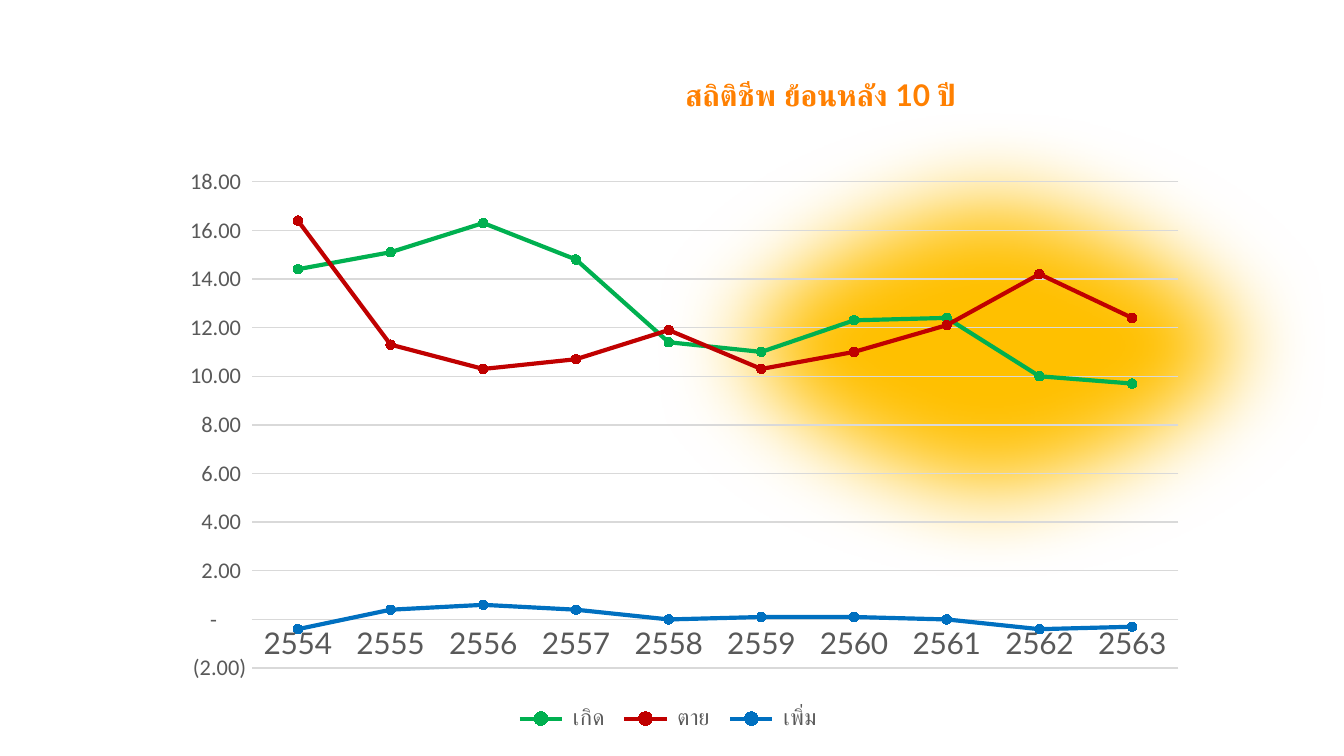
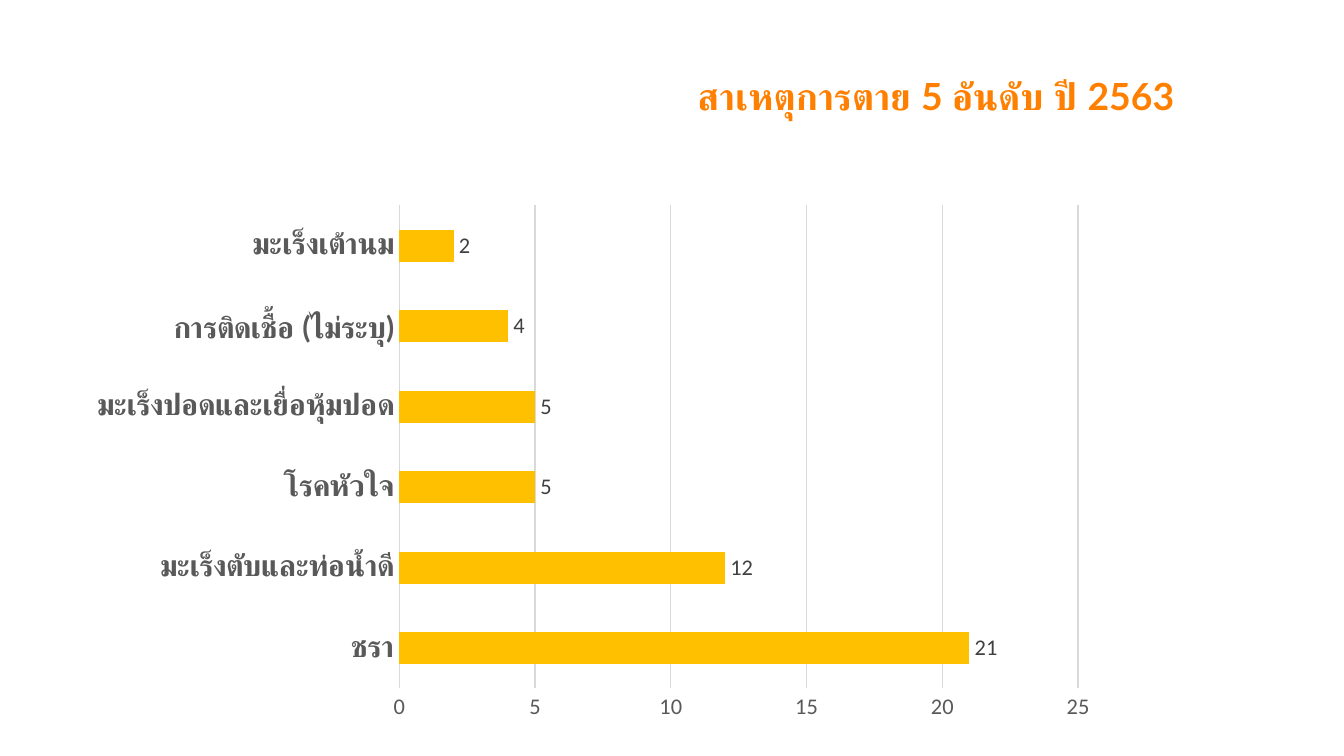
from dataclasses import dataclass

from pptx import Presentation
from pptx.chart.axis import CategoryAxis, ValueAxis
from pptx.chart.chart import Chart
from pptx.chart.data import CategoryChartData
from pptx.dml.color import RGBColor
from pptx.enum.chart import XL_CHART_TYPE as ChartType
from pptx.enum.chart import XL_LABEL_POSITION as LabelPosition
from pptx.enum.chart import XL_LEGEND_POSITION as LegendPosition
from pptx.enum.chart import XL_MARKER_STYLE as MarkerStyle
from pptx.enum.chart import XL_TICK_MARK as TickMark
from pptx.enum.shapes import MSO_SHAPE as Preset
from pptx.enum.text import MSO_ANCHOR as Anchor
from pptx.enum.text import MSO_AUTO_SIZE as AutoSize
from pptx.enum.text import PP_ALIGN as Align
from pptx.oxml import parse_xml
from pptx.oxml.ns import nsdecls, qn
from pptx.slide import Slide
from pptx.text.text import Font
from pptx.util import Emu, Inches, Pt

SLIDE_WIDTH = Inches(10)
SLIDE_HEIGHT = Emu(SLIDE_WIDTH * 9 // 16)
TITLE_ONLY = 5


@dataclass(frozen=True)
class Theme:
    background: str = "FFFFFF"
    title: str = "FF8001"
    highlight: str = "FFC000"
    chart_text: str = "000000"
    axis_text: str = "595959"
    label_text: str = "404040"
    grid: str = "D9D9D9"
    births: str = "00B050"
    deaths: str = "C00000"
    increase: str = "0070C0"
    heading_font: str = "Lato"
    body_font: str = "Calibri"
    base_size: float = 10
    value_size: float = 12
    category_size: float = 16
    grid_width: float = 0.75
    trend_width: float = 2.25
    marker_size: int = 5
    soft_edge: float = 50


THEME = Theme()


@dataclass(frozen=True)
class Frame:
    """A place on a grid of 100 columns by 100 rows."""
    column: float
    row: float
    columns: float
    rows: float

    def box(self) -> tuple[Emu, Emu, Emu, Emu]:
        across, down = SLIDE_WIDTH / 100, SLIDE_HEIGHT / 100
        return (Emu(round(self.column * across)), Emu(round(self.row * down)),
                Emu(round(self.columns * across)), Emu(round(self.rows * down)))


@dataclass(frozen=True)
class Trend:
    name: str
    color: str
    rates: tuple[float, ...]


@dataclass(frozen=True)
class Scale:
    low: float
    high: float
    step: float
    number_format: str = "General"


YEARS = [str(year) for year in range(2554, 2564)]
TRENDS = (
    Trend(" เกิด ", THEME.births, (14.4, 15.1, 16.3, 14.8, 11.4, 11, 12.3, 12.4, 10, 9.7)),
    Trend(" ตาย ", THEME.deaths, (16.4, 11.3, 10.3, 10.7, 11.9, 10.3, 11, 12.1, 14.2, 12.4)),
    Trend(" เพิ่ม ", THEME.increase, (-0.4, 0.4, 0.6, 0.4, 0, 0.1, 0.1, 0, -0.4, -0.3)),
)
RATE_SCALE = Scale(-2, 18, 2, r'_(* #,##0.00_);_(* \(#,##0.00\);_(* "-"??_);_(@_)')
DEATH_CAUSES = {
    "ชรา": 21,
    "มะเร็งตับและท่อน้ำดี": 12,
    "โรคหัวใจ": 5,
    "มะเร็งปอดและเยื่อหุ้มปอด": 5,
    "การติดเชื้อ (ไม่ระบุ)": 4,
    "มะเร็งเต้านม": 2,
}
DEATH_SCALE = Scale(0, 25, 5)


def set_font(font: Font, name: str, size: float, color: str, bold: bool = False) -> None:
    font.name, font.size, font.bold = name, Pt(size), bold
    font.color.rgb = RGBColor.from_string(color)


def add_titled_slide(deck: Presentation, wording: str, frame: Frame, size: float) -> Slide:
    slide = deck.slides.add_slide(deck.slide_layouts[TITLE_ONLY])
    slide.background.fill.solid()
    slide.background.fill.fore_color.rgb = RGBColor.from_string(THEME.background)
    title = slide.shapes.title
    title.left, title.top, title.width, title.height = frame.box()
    text = title.text_frame
    text.text = wording
    text.word_wrap, text.auto_size = True, AutoSize.NONE
    text.vertical_anchor = Anchor.MIDDLE
    text.paragraphs[0].alignment = Align.LEFT
    set_font(text.paragraphs[0].runs[0].font, THEME.heading_font, size, THEME.title, True)
    return slide


def bring_title_forward(slide: Slide) -> None:
    title = slide.shapes.title.element
    title.getparent().append(title)


def add_glow(slide: Slide, frame: Frame) -> None:
    """Draw the soft-edged ellipse behind the latest years."""
    glow = slide.shapes.add_shape(Preset.OVAL, *frame.box())
    glow.fill.solid()
    glow.fill.fore_color.rgb = RGBColor.from_string(THEME.highlight)
    glow.line.fill.background()
    glow.shadow.inherit = False
    glow.element.spPr.find(qn("a:effectLst")).append(parse_xml(
        f'<a:softEdge {nsdecls("a")} rad="{Pt(THEME.soft_edge)}"/>'))


def style_category_axis(axis: CategoryAxis, bold: bool, line_shown: bool) -> None:
    axis.major_tick_mark = axis.minor_tick_mark = TickMark.NONE
    axis.has_major_gridlines = False
    set_font(axis.tick_labels.font, THEME.heading_font, THEME.category_size,
             THEME.axis_text, bold)
    if line_shown:
        axis.format.line.color.rgb = RGBColor.from_string(THEME.grid)
        axis.format.line.width = Pt(THEME.grid_width)
    else:
        axis.format.line.fill.background()


def style_value_axis(axis: ValueAxis, scale: Scale) -> None:
    axis.major_tick_mark = axis.minor_tick_mark = TickMark.NONE
    axis.minimum_scale, axis.maximum_scale = scale.low, scale.high
    axis.major_unit = scale.step
    axis.format.line.fill.background()
    axis.has_major_gridlines = True
    axis.major_gridlines.format.line.color.rgb = RGBColor.from_string(THEME.grid)
    axis.major_gridlines.format.line.width = Pt(THEME.grid_width)
    set_font(axis.tick_labels.font, THEME.body_font, THEME.value_size, THEME.axis_text)
    axis.tick_labels.number_format = scale.number_format
    axis.tick_labels.number_format_is_linked = False


def clear_background(chart: Chart) -> None:
    no_fill = (f'<c:spPr {nsdecls("c", "a")}><a:noFill/>'
               '<a:ln><a:noFill/></a:ln></c:spPr>')
    chart_part = chart.element.find(qn("c:chart"))
    chart_part.addnext(parse_xml(no_fill))
    chart_part.find(qn("c:plotArea")).append(parse_xml(no_fill))


def add_plain_chart(slide: Slide, kind: ChartType, frame: Frame,
                    figures: CategoryChartData, scale: Scale,
                    bold_categories: bool = False, axis_line: bool = False) -> Chart:
    chart = slide.shapes.add_chart(kind, *frame.box(), figures).chart
    chart.has_title = chart.has_legend = False
    set_font(chart.font, THEME.body_font, THEME.base_size, THEME.chart_text)
    chart.plots[0].vary_by_categories = False
    style_category_axis(chart.category_axis, bold_categories, axis_line)
    style_value_axis(chart.value_axis, scale)
    clear_background(chart)
    return chart


def place_plot(chart: Chart, inner: Frame) -> None:
    """Fix the inner plot area, in hundredths of the chart."""
    plot_area = chart.element.find(qn("c:chart")).find(qn("c:plotArea"))
    for automatic in plot_area.findall(qn("c:layout")):
        plot_area.remove(automatic)
    sizes = "".join(f'<c:{key} val="{share / 100:.3f}"/>' for key, share in
                    zip("xywh", (inner.column, inner.row, inner.columns, inner.rows)))
    plot_area.insert(0, parse_xml(
        f'<c:layout {nsdecls("c")}><c:manualLayout><c:layoutTarget val="inner"/>'
        f'<c:xMode val="edge"/><c:yMode val="edge"/>{sizes}'
        '</c:manualLayout></c:layout>'))


def add_trend_chart(slide: Slide, frame: Frame) -> None:
    figures = CategoryChartData()
    figures.categories = YEARS
    for trend in TRENDS:
        figures.add_series(trend.name, trend.rates)
    chart = add_plain_chart(slide, ChartType.LINE_MARKERS, frame, figures,
                            RATE_SCALE, axis_line=True)
    place_plot(chart, Frame(9.7, 4.9, 89, 83.6))
    chart.has_legend = True
    chart.legend.position = LegendPosition.BOTTOM
    chart.legend.include_in_layout = False
    set_font(chart.legend.font, THEME.body_font, THEME.value_size, THEME.axis_text)
    for trend, series in zip(TRENDS, chart.plots[0].series):
        color = RGBColor.from_string(trend.color)
        series.smooth = False
        series.format.line.color.rgb = color
        series.format.line.width = Pt(THEME.trend_width)
        series.marker.style = MarkerStyle.CIRCLE
        series.marker.size = THEME.marker_size
        series.marker.format.fill.solid()
        series.marker.format.fill.fore_color.rgb = color
        series.marker.format.line.color.rgb = color


def add_cause_chart(slide: Slide, frame: Frame) -> None:
    figures = CategoryChartData()
    figures.categories = list(DEATH_CAUSES)
    figures.add_series("Series 1", DEATH_CAUSES.values())
    chart = add_plain_chart(slide, ChartType.BAR_CLUSTERED, frame, figures,
                            DEATH_SCALE, bold_categories=True)
    plot = chart.plots[0]
    plot.gap_width = 150
    deaths = plot.series[0]
    deaths.format.fill.solid()
    deaths.format.fill.fore_color.rgb = RGBColor.from_string(THEME.highlight)
    labels = deaths.data_labels
    labels.show_value = True
    labels.position = LabelPosition.OUTSIDE_END
    set_font(labels.font, THEME.body_font, THEME.value_size, THEME.label_text)


def main() -> None:
    deck = Presentation()
    deck.slide_width, deck.slide_height = SLIDE_WIDTH, SLIDE_HEIGHT

    vital_rates = add_titled_slide(deck, "สถิติชีพ ย้อนหลัง 10 ปี",
                                   Frame(50, 8.36, 35.6, 8.36), 16)
    add_glow(vital_rates, Frame(46.3, 13.16, 55, 65.07))
    add_trend_chart(vital_rates, Frame(11.2, 20.27, 77.5, 76.98))
    bring_title_forward(vital_rates)

    death_causes = add_titled_slide(deck, "สาเหตุการตาย 5 อันดับ ปี 2563",
                                    Frame(50.9, 4.8, 43.4, 15.64), 20)
    add_cause_chart(death_causes, Frame(5.7, 25.78, 76.9, 70.93))
    bring_title_forward(death_causes)

    deck.save("out.pptx")


if __name__ == "__main__":
    main()
